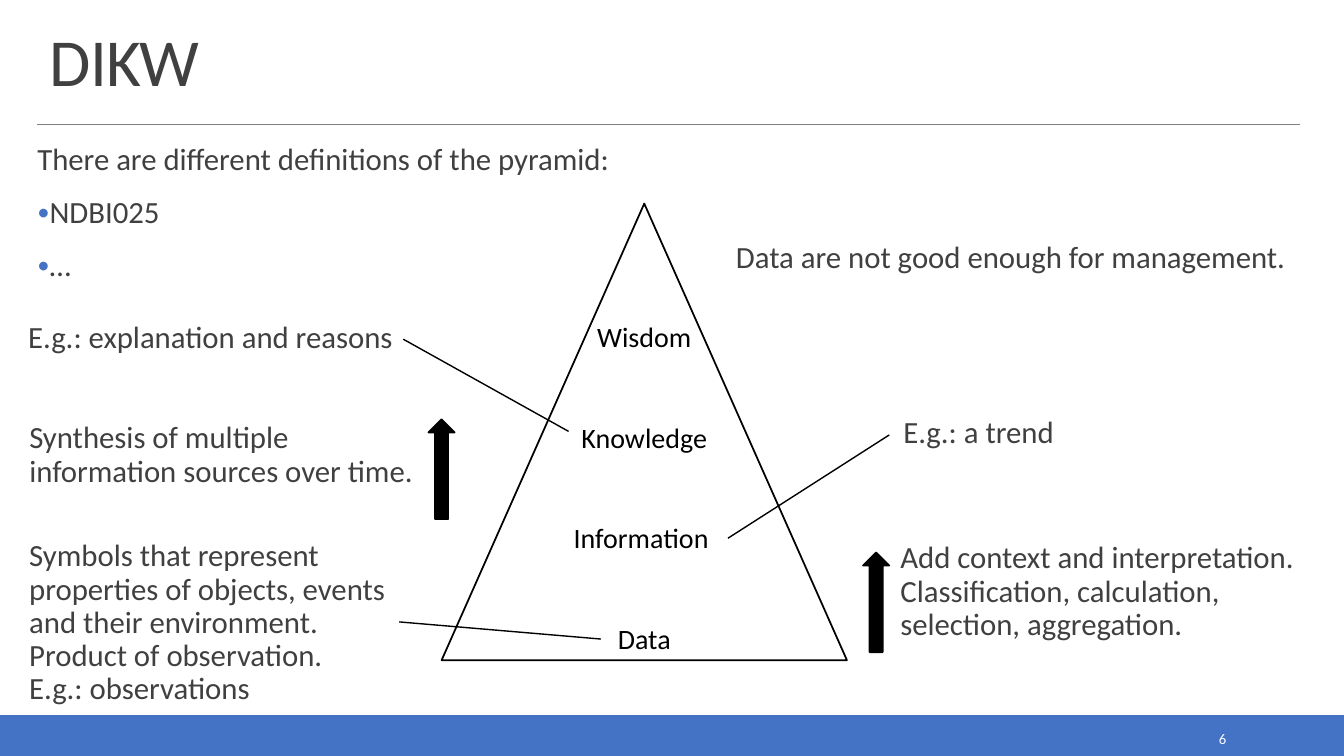
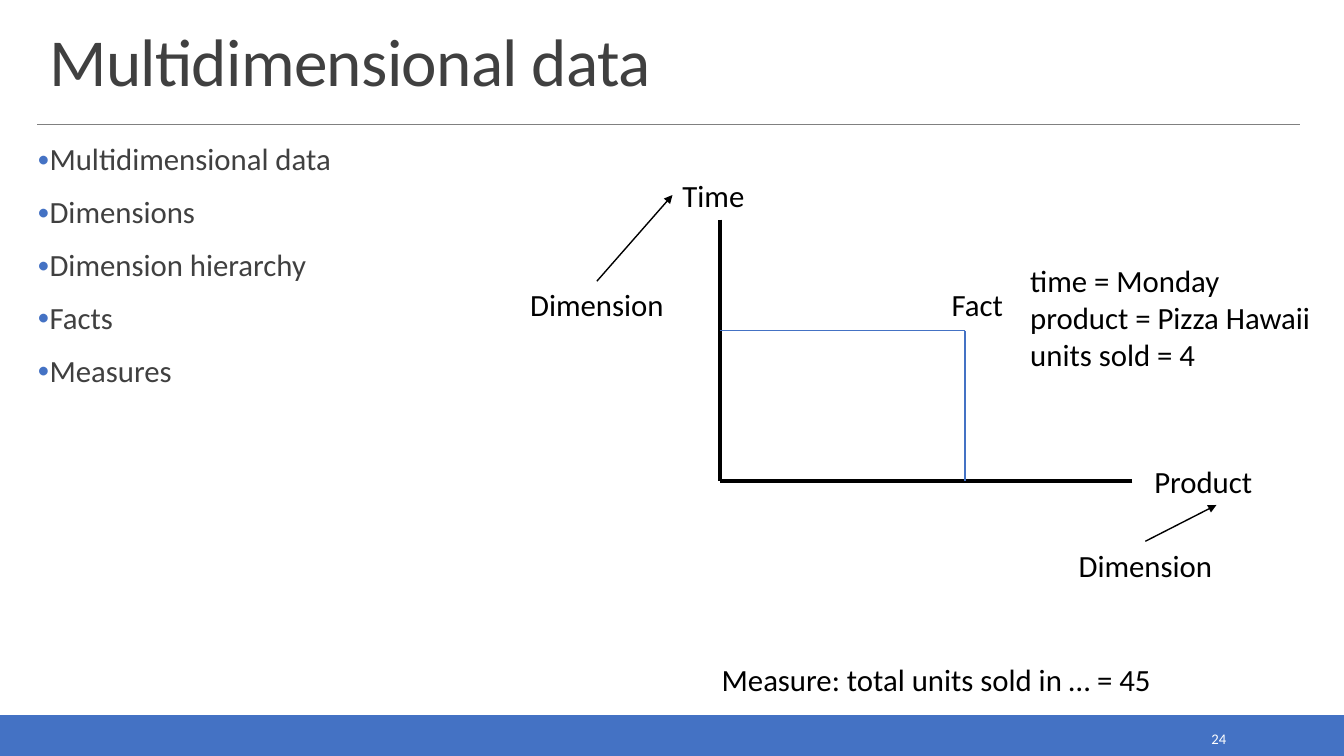
from lxml.etree import SubElement
from pptx import Presentation
from pptx.dml.color import RGBColor
from pptx.enum.shapes import MSO_CONNECTOR, MSO_SHAPE
from pptx.enum.text import MSO_ANCHOR, MSO_AUTO_SIZE, PP_ALIGN
from pptx.oxml.ns import qn
from pptx.util import Inches, Pt

BLUE, GREY, RULE = "4472C4", "404040", "808080"
BLACK, WHITE = "000000", "FFFFFF"
FONT = "Calibri"


def tint(code):
    return RGBColor.from_string(code)


def place(shape, box):
    shape.left, shape.top, shape.width, shape.height = map(Inches, box)


def shift(box, dx, dy, width, height):
    return box[0] + dx, box[1] + dy, width, height


def style(part, size, color, align=PP_ALIGN.LEFT):
    part.alignment = align
    for run in part.runs:
        run.font.size = Pt(size)
        run.font.name = FONT
        run.font.color.rgb = tint(color)


def space(part):
    part.line_spacing = 0.9
    part.space_before = Pt(12)
    part.space_after = Pt(2)


def inset(frame, left=0):
    frame.margin_left, frame.margin_right = Inches(left), 0
    frame.margin_top = frame.margin_bottom = Inches(0.04)


def label(slide, box, text, size=22, color=BLACK, align=PP_ALIGN.LEFT):
    shape = slide.shapes.add_textbox(*map(Inches, box))
    frame = shape.text_frame
    frame.word_wrap = True
    frame.text = text
    for part in frame.paragraphs:
        style(part, size, color, align)
    return shape


def note(slide, box, text, indent=0):
    shape = label(slide, box, text, color=GREY)
    inset(shape.text_frame, indent)
    space(shape.text_frame.paragraphs[0])
    return shape


def tag(slide, box, text, align=PP_ALIGN.LEFT):
    shape = label(slide, box, text, align=align)
    shape.text_frame.auto_size = MSO_AUTO_SIZE.SHAPE_TO_FIT_TEXT
    return shape


def block(slide, kind, box, fill, edge):
    shape = slide.shapes.add_shape(kind, *map(Inches, box))
    shape.shadow.inherit = False
    if fill:
        shape.fill.solid()
        shape.fill.fore_color.rgb = tint(fill)
    else:
        shape.fill.background()
    shape.line.color.rgb = tint(edge)
    shape.line.width = Pt(1.25)
    return shape


def link(slide, start, end, color=BLACK, width=1, head=False, begin=None, finish=None):
    line = slide.shapes.add_connector(MSO_CONNECTOR.STRAIGHT, *map(Inches, (*start, *end)))
    line.line.color.rgb = tint(color)
    line.line.width = Pt(width)
    props = line._element.spPr
    if head:
        SubElement(props.find(qn("a:ln")), qn("a:tailEnd"), type="triangle")
    SubElement(props, qn("a:effectLst"))
    if begin:
        line.begin_connect(*begin)
    if finish:
        line.end_connect(*finish)


def bullet(part, shown):
    props = part._p.get_or_add_pPr()
    props.set("marL", str(Inches(0.1) if shown else 0))
    props.set("indent", str(-Inches(0.1) if shown else 0))
    if shown:
        SubElement(SubElement(props, qn("a:buClr")), qn("a:srgbClr"), val=BLUE)
        SubElement(props, qn("a:buSzPct"), val="80000")
        SubElement(props, qn("a:buFont"), typeface=FONT)
        SubElement(props, qn("a:buChar"), char="•")
    else:
        SubElement(props, qn("a:buNone"))


def base(deck, title, page):
    slide = deck.slides.add_slide(deck.slide_layouts[1])
    block(slide, MSO_SHAPE.RECTANGLE, (0, 7.1, 13.33, 0.4), BLUE, BLUE)
    link(slide, (0.37, 1.23), (12.89, 1.23), RULE, 0.5)
    head = slide.shapes.title
    place(head, (0.39, 0.2, 12.52, 0.84))
    frame = head.text_frame
    frame.text = title
    frame.auto_size = MSO_AUTO_SIZE.NONE
    frame.vertical_anchor = MSO_ANCHOR.BOTTOM
    part = frame.paragraphs[0]
    part.line_spacing = 0.85
    style(part, 48, GREY)
    part.runs[0].font._element.set("spc", "-50")
    foot = label(slide, (10.83, 7.19, 1.43, 0.28), page, 10.5, WHITE, PP_ALIGN.RIGHT)
    foot.text_frame.vertical_anchor = MSO_ANCHOR.MIDDLE
    return slide


def points(slide, box, items, intro=0):
    body = slide.placeholders[1]
    place(body, box)
    frame = body.text_frame
    frame.text = "\n".join(items)
    frame.auto_size = MSO_AUTO_SIZE.NONE
    inset(frame)
    for i, part in enumerate(frame.paragraphs):
        style(part, 22, GREY)
        space(part)
        bullet(part, i >= intro)


def peak(slide, box):
    shape = block(slide, MSO_SHAPE.ISOSCELES_TRIANGLE, box, None, BLACK)
    frame = shape.text_frame
    frame.vertical_anchor = MSO_ANCHOR.BOTTOM
    frame.text = "Wisdom\nKnowledge\nInformation \nData"
    for i, part in enumerate(frame.paragraphs):
        style(part, 20, BLACK, PP_ALIGN.CENTER)
        part.space_before = Pt(48 if i else 0)


def rise(slide, box):
    block(slide, MSO_SHAPE.UP_ARROW, box, BLACK, BLACK)


def left_side(slide, box):
    cause = note(slide, shift(box, -0.15, 0, 3.86, 0.43), "E.g.: explanation and reasons", 0.14)
    note(slide, shift(box, 0, 1, 3.81, 0.98), "Synthesis of multiple information sources over time.")
    signs = note(slide, shift(box, 0, 2.17, 3.67, 1.7),
                 "Symbols that represent properties of objects, events and their environment. "
                 "Product of observation. \vE.g.: observations")
    rise(slide, shift(box, 3.96, 1.01, 0.26, 0.99))
    for shape, spot in ((cause, (5.35, 1.13)), (signs, (5.67, 3.19))):
        start = shift(box, *spot, 0, 0)[:2]
        link(slide, start, start, finish=(shape, 3))


def right_side(slide, box):
    note(slide, shift(box, 0, 0, 5.74, 0.43), "Data are not good enough for management.")
    trend = note(slide, shift(box, 1.52, 1.74, 3.86, 0.43), "E.g.: a trend", 0.14)
    note(slide, shift(box, 1.63, 2.98, 4.12, 0.98),
         "Add context and interpretation. Classification, calculation, selection, aggregation.")
    rise(slide, shift(box, 1.26, 3.12, 0.26, 0.99))
    end = shift(box, -0.08, 2.98, 0, 0)[:2]
    link(slide, end, end, begin=(trend, 1))


def graph(slide, box):
    x, y, width, height = box
    base_y, fact_x, fact_y = y + height, x + 2.43, y + 1.1
    link(slide, (x, y), (x, base_y), width=3)
    link(slide, (x + width, base_y), (x, base_y), width=3)
    link(slide, (x, fact_y), (fact_x, fact_y), BLUE)
    link(slide, (fact_x, fact_y), (fact_x, base_y), BLUE)
    time = tag(slide, shift(box, -0.47, -0.48, 0.94, 0.47), "Time")
    goods = tag(slide, shift(box, 4.21, 2.36, 1.43, 0.47), "Product")
    tag(slide, shift(box, 2.2, 0.61, 0.77, 0.47), "Fact")
    tag(slide, shift(box, 2.98, 0.37, 3.16, 1.21),
        "time = Monday\nproduct = Pizza Hawaii\nunits sold = 4")
    tag(slide, shift(box, -0.08, 4.33, 4.86, 0.47), "Measure: total units sold in … = 45")
    for dx, dy, goal, side in ((-2.13, 0.61, time, 1), (3.31, 3.19, goods, 2)):
        name = tag(slide, shift(box, dx, dy, 1.82, 0.47), "Dimension", PP_ALIGN.CENTER)
        link(slide, (x, y), (x, y), head=True, begin=(name, 0), finish=(goal, side))


def main():
    deck = Presentation()
    deck.slide_width, deck.slide_height = Inches(13.33), Inches(7.5)

    slide = base(deck, "DIKW", "6")
    points(slide, (0.37, 1.39, 12.52, 1.57),
           ["There are different definitions of the pyramid:", "NDBI025", "…"], intro=1)
    peak(slide, (4.38, 2.02, 4.02, 4.53))
    left_side(slide, (0.29, 3.15, 4.22, 3.87))
    right_side(slide, (7.3, 2.36, 5.74, 4.11))

    slide = base(deck, "Multidimensional data", "24")
    points(slide, (0.37, 1.39, 6.3, 5.51),
           ["Multidimensional data", "Dimensions", "Dimension hierarchy", "Facts", "Measures"])
    graph(slide, (7.14, 2.18, 4.09, 2.59))

    deck.save("out.pptx")


if __name__ == "__main__":
    main()
